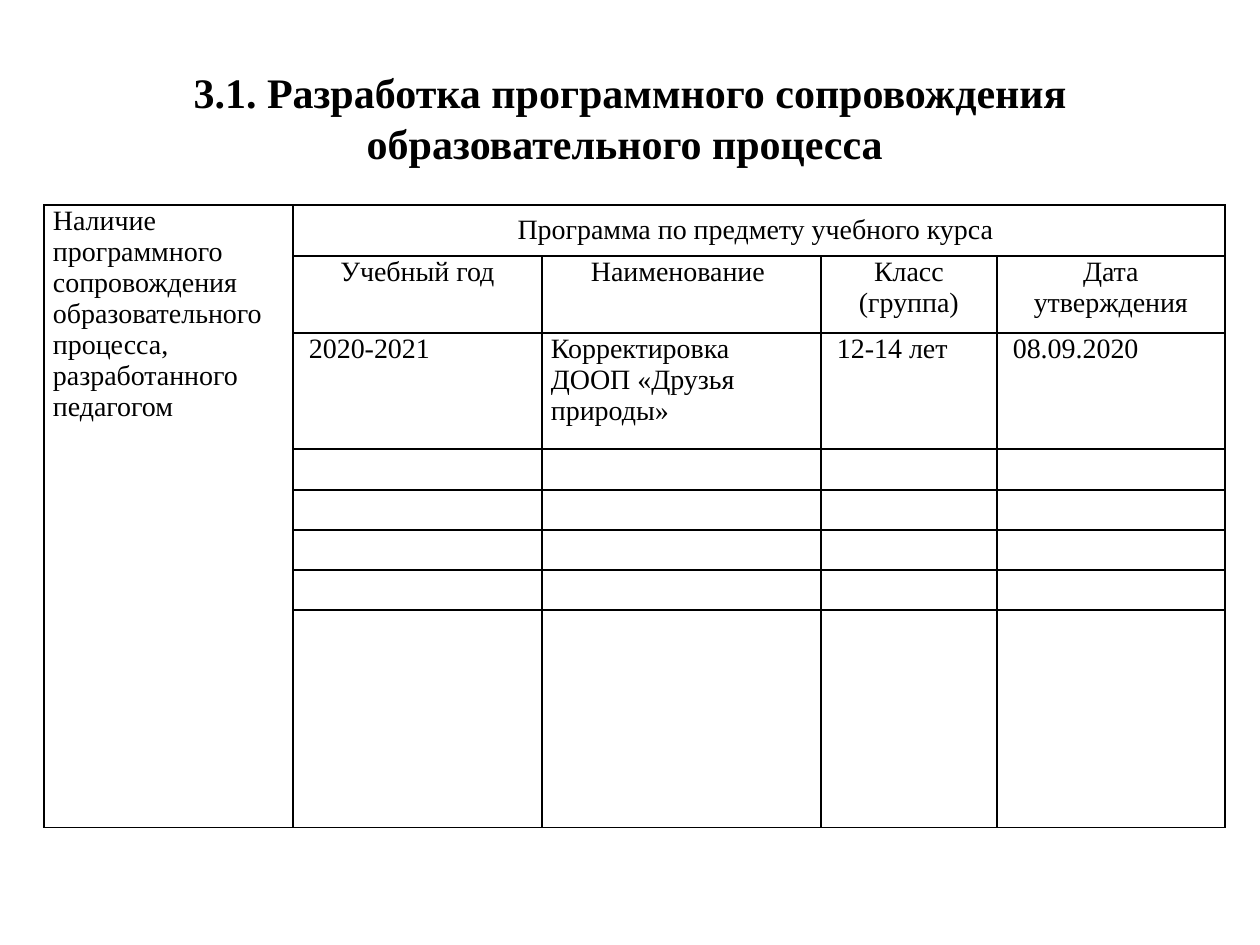
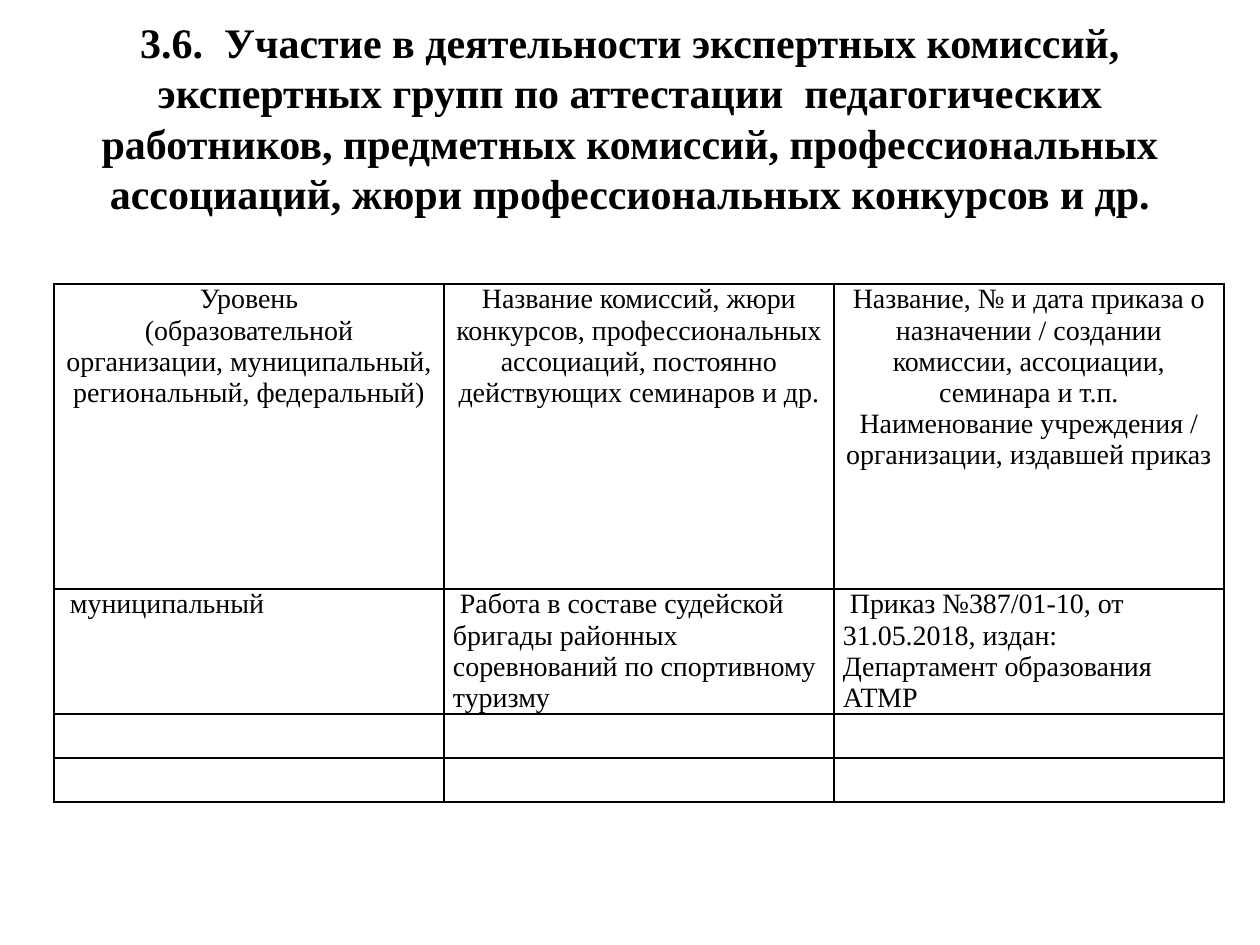
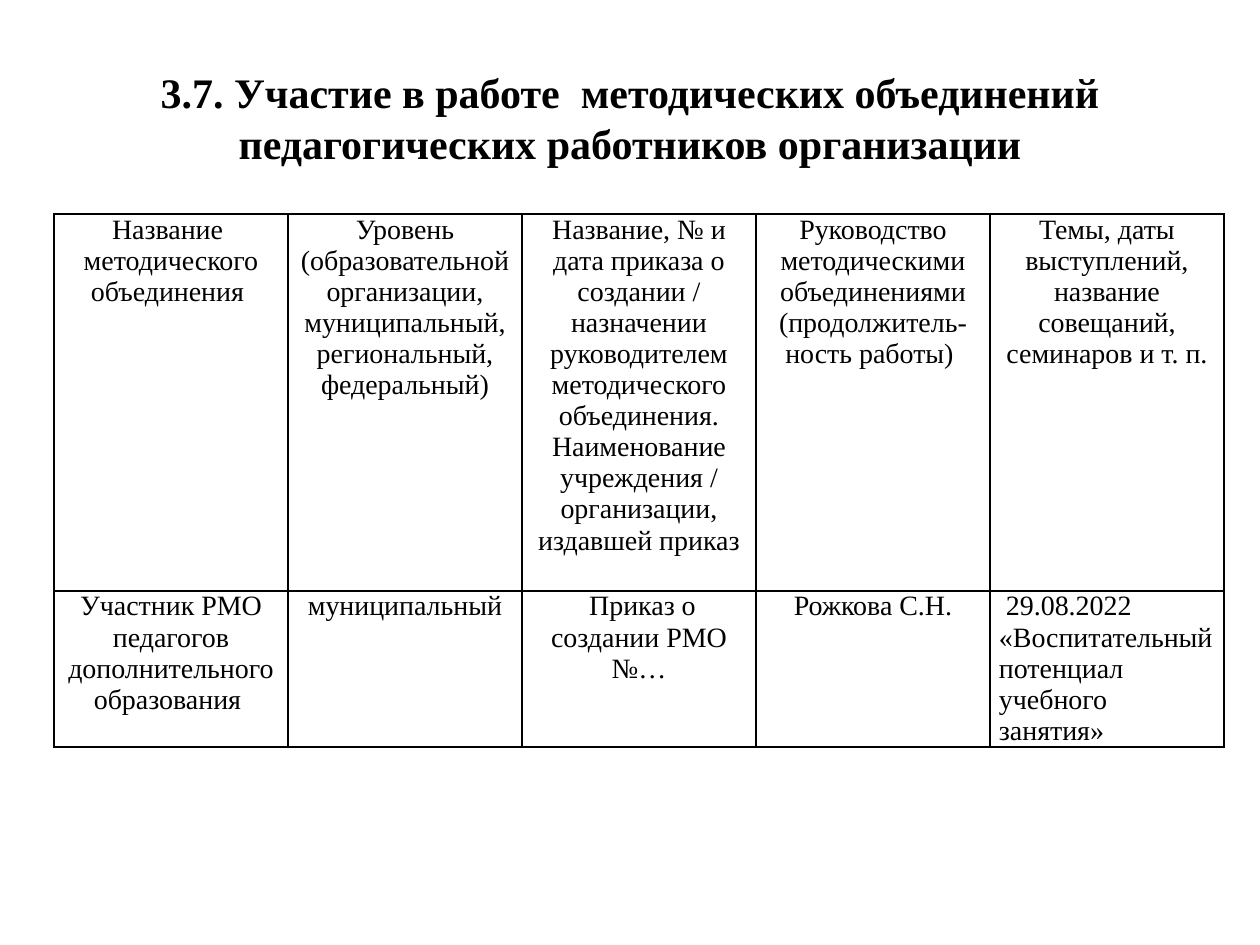
from lxml import etree
from pptx import Presentation
from pptx import util as u
from pptx.dml.color import RGBColor
from pptx.enum import text
from pptx.oxml.ns import qn

SCALE = u.Inches(1) / 126
COLORS = {"ink": "000000", "paper": "FFFFFF"}
FONT = "Times New Roman"
TITLE_SIZE, CELL_SIZE = 24, 16
CELL_MARGIN = 9


def px(length):
    """Turn pixels into EMU."""
    return u.Emu(round(length * SCALE))


class Deck:
    """Hold the shared style and the slide being built."""

    def __init__(self):
        """Start an empty deck of 1260 by 945 px."""
        self.show = Presentation()
        self.show.slide_width, self.show.slide_height = px(1260), px(945)
        self.slide = None

    def new_slide(self, heading):
        """Start a slide with its heading."""
        self.slide = self.show.slides.add_slide(self.show.slide_layouts[6])
        background = self.slide.background.fill
        background.solid()
        background.fore_color.rgb = RGBColor.from_string(COLORS["paper"])
        frame = self.slide.shapes.add_textbox(px(63), px(38), px(1134), px(158)).text_frame
        frame.word_wrap = True
        frame.auto_size = text.MSO_AUTO_SIZE.NONE
        frame.vertical_anchor = text.MSO_ANCHOR.MIDDLE
        self.set_text(frame, heading, TITLE_SIZE, True, bold=True)

    def set_text(self, frame, content, size, centred, bold=False):
        """Fill a text frame, one paragraph per line of content."""
        for index, line in enumerate(content.split("\n")):
            paragraph = frame.add_paragraph() if index else frame.paragraphs[0]
            paragraph.alignment = text.PP_ALIGN.CENTER if centred else text.PP_ALIGN.LEFT
            if line:
                run = paragraph.add_run()
                run.text = line
                run.font.name, run.font.size, run.font.bold = FONT, u.Pt(size), bold
                run.font.color.rgb = RGBColor.from_string(COLORS["ink"])

    def border(self, cell):
        """Draw a thin line on every side of a cell."""
        properties = cell._tc.get_or_add_tcPr()
        for side in ("a:lnL", "a:lnR", "a:lnT", "a:lnB"):
            line = etree.SubElement(properties, qn(side), w=str(u.Pt(1)))
            fill = etree.SubElement(line, qn("a:solidFill"))
            etree.SubElement(fill, qn("a:srgbClr"), val=COLORS["ink"])

    def table(self, left, top, widths, heights, rows, is_centred):
        """Add a ruled table; rows left out of the content stay empty."""
        grid = self.slide.shapes.add_table(
            len(heights), len(widths), px(left), px(top), px(sum(widths)), px(sum(heights))
        ).table
        grid.first_row = grid.horz_banding = False
        for column, width in zip(grid.columns, widths):
            column.width = px(width)
        for r, height in enumerate(heights):
            grid.rows[r].height = px(height)
            for c in range(len(widths)):
                cell = grid.cell(r, c)
                cell.margin_left = cell.margin_right = px(CELL_MARGIN)
                cell.margin_top = cell.margin_bottom = 0
                self.border(cell)
                cell.fill.background()
                if r < len(rows):
                    self.set_text(cell.text_frame, rows[r][c], CELL_SIZE, is_centred(r, c))
        return grid


def main():
    """Build the three slides."""
    deck = Deck()

    deck.new_slide("3.1. Разработка программного сопровождения образовательного процесса ")
    programmes = deck.table(
        44, 205, [249, 249, 279, 176, 228], [51, 77, 116, 41, 40, 40, 40, 217],
        [
            ["Наличие программного сопровождения образовательного процесса, "
             "разработанного педагогом",
             "Программа по предмету учебного курса ", "", "", ""],
            ["", "Учебный год", "Наименование ", "Класс (группа)", "Дата утверждения"],
            ["", " 2020-2021", "Корректировка ДООП «Друзья природы»", " 12-14 лет",
             " 08.09.2020"],
        ],
        lambda r, c: r < 2 and c > 0,
    )
    programmes.cell(0, 0).merge(programmes.cell(7, 0))
    programmes.cell(0, 1).merge(programmes.cell(0, 4))
    programmes.cell(0, 1).vertical_anchor = text.MSO_ANCHOR.MIDDLE

    level = ("Уровень\n(образовательной организации, муниципальный, "
             "региональный, федеральный)")
    issuer = "Наименование учреждения / организации, издавшей приказ"

    deck.new_slide(
        "3.6.  Участие в деятельности экспертных комиссий, экспертных групп по аттестации  "
        "педагогических работников, предметных комиссий, профессиональных ассоциаций, "
        "жюри профессиональных конкурсов и др."
    )
    deck.table(
        54, 284, [390] * 3, [305, 125, 44, 44],
        [
            [level,
             "Название комиссий, жюри конкурсов, профессиональных ассоциаций, "
             "постоянно действующих семинаров и др.",
             "Название, № и дата приказа о назначении / создании комиссии, ассоциации, "
             "семинара и т.п.\n" + issuer],
            [" муниципальный",
             " Работа в составе судейской бригады районных соревнований "
             "по спортивному туризму",
             " Приказ №387/01-10, от 31.05.2018, издан: Департамент образования АТМР"],
        ],
        lambda r, c: r == 0,
    )

    deck.new_slide(
        "3.7. Участие в работе  методических объединений педагогических работников организации"
    )
    deck.table(
        54, 214, [234] * 5, [377, 156],
        [
            ["Название  методического объединения ",
             level,
             "Название, № и дата приказа о создании / назначении руководителем "
             "методического объединения.\n" + issuer,
             "Руководство методическими объединениями\n(продолжитель-ность работы) ",
             "Темы, даты\nвыступлений, название совещаний, семинаров и т. п."],
            ["Участник РМО педагогов дополнительного образования ",
             "муниципальный",
             " Приказ о создании РМО №…",
             "Рожкова С.Н.",
             " 29.08.2022\n«Воспитательный потенциал учебного занятия»"],
        ],
        lambda r, c: (r, c) != (1, 4),
    )

    deck.show.save("out.pptx")


if __name__ == "__main__":
    main()
